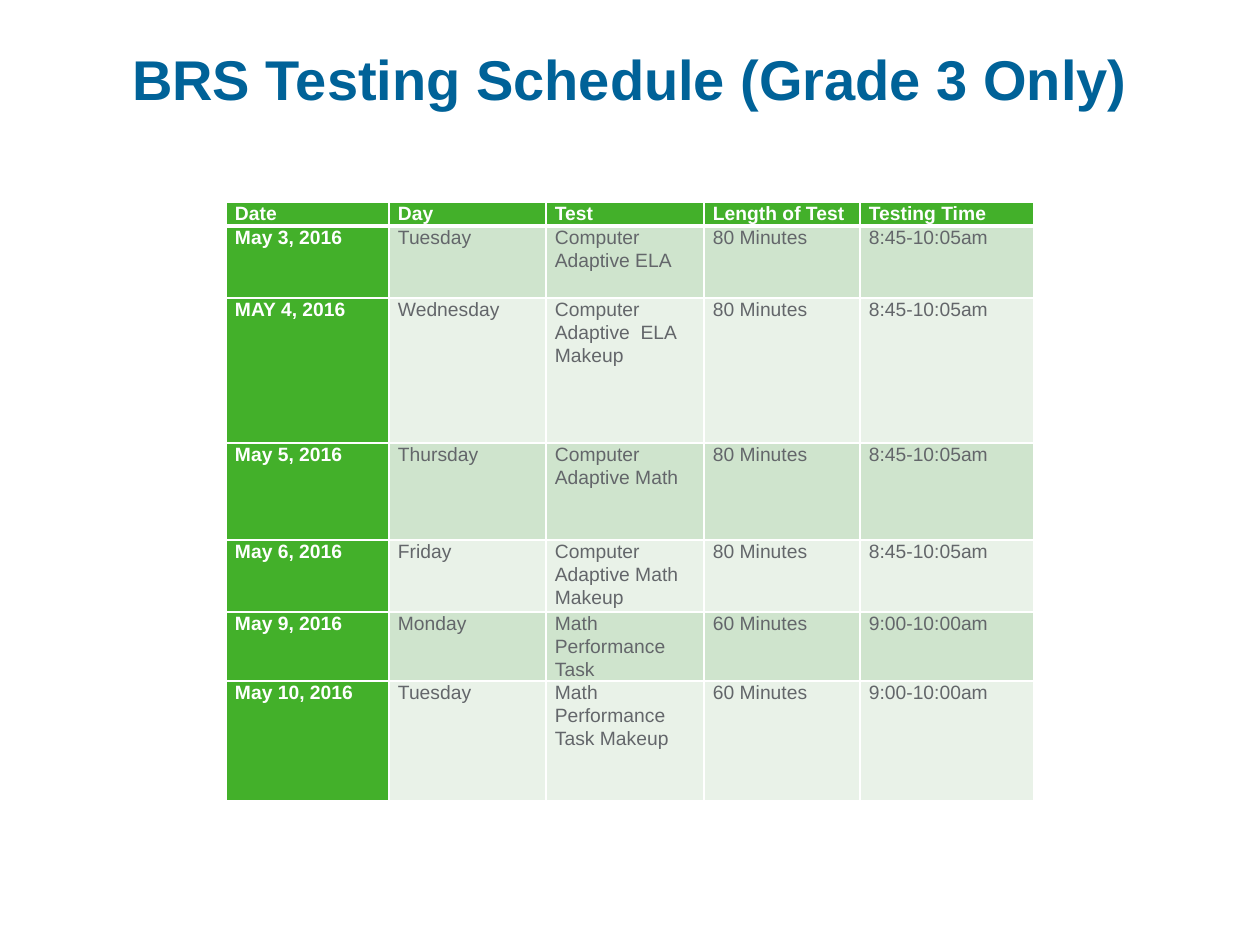
import pptx
import pptx.util
import pptx.dml.color
import pptx.enum.text
import lxml.etree

PX = 914400 // 126
NS = "{http://schemas.openxmlformats.org/drawingml/2006/main}"
GREEN, WHITE, GRAY = "43B02A", "FFFFFF", "63666A"
BANDS = ["CFE4CD", "E9F2E8"]


def rgb(value):
    return pptx.dml.color.RGBColor.from_string(value)


def add_text(p, text, size, color, bold):
    r = p.add_run()
    r.text = text
    r.font.name = "Arial"
    r.font.size = pptx.util.Pt(size)
    r.font.bold = bold
    r.font.color.rgb = rgb(color)


prs = pptx.Presentation()
prs.slide_width = pptx.util.Inches(10)
prs.slide_height = pptx.util.Inches(7.5)
s = prs.slides.add_slide(prs.slide_layouts[5])

# Title
title = s.shapes.title
title.left, title.top, title.width, title.height = [v * PX for v in (63, 38, 1134, 158)]
tf = title.text_frame
tf.auto_size = pptx.enum.text.MSO_AUTO_SIZE.NONE
tf.vertical_anchor = pptx.enum.text.MSO_ANCHOR.TOP
p = tf.paragraphs[0]
p.alignment = pptx.enum.text.PP_ALIGN.CENTER
add_text(p, "BRS Testing Schedule (Grade 3 Only)", 32, "006298", True)

# Schedule data
rows = [
    ["Date", "Day", "Test", "Length of Test", "Testing Time"],
    ["May 3, 2016", "Tuesday", "Computer Adaptive ELA", "80 Minutes", "8:45-10:05am"],
    ["MAY 4, 2016", "Wednesday", "Computer Adaptive  ELA Makeup", "80 Minutes", "8:45-10:05am"],
    ["May 5, 2016", "Thursday", "Computer Adaptive Math", "80 Minutes", "8:45-10:05am"],
    ["May 6, 2016", "Friday", "Computer Adaptive Math Makeup", "80 Minutes", "8:45-10:05am"],
    ["May 9, 2016", "Monday", "Math Performance Task", "60 Minutes", "9:00-10:00am"],
    ["May 10, 2016", "Tuesday", "Math Performance Task Makeup", "60 Minutes", "9:00-10:00am"],
]
widths = [163, 157, 158, 156, 174]
heights = [24, 72, 145, 97, 72, 69, 120]

# Table
table = s.shapes.add_table(len(rows), len(widths), 226 * PX, 202 * PX,
                           sum(widths) * PX, sum(heights) * PX).table
for column, width in zip(table.columns, widths):
    column.width = width * PX
for row, height in zip(table.rows, heights):
    row.height = height * PX

for i, row in enumerate(rows):
    for j, text in enumerate(row):
        cell = table.cell(i, j)
        heading = i == 0 or j == 0
        cell.margin_left = cell.margin_right = 9 * PX
        cell.margin_top = cell.margin_bottom = 0

        # White borders, thicker under the header row
        tcPr = cell._tc.get_or_add_tcPr()
        for side in "LRTB":
            thick = (i, side) in [(0, "B"), (1, "T")]
            ln = lxml.etree.SubElement(tcPr, NS + "ln" + side,
                                       w=str(pptx.util.Pt(3 if thick else 1)))
            fill = lxml.etree.SubElement(ln, NS + "solidFill")
            lxml.etree.SubElement(fill, NS + "srgbClr", val=WHITE)

        cell.fill.solid()
        cell.fill.fore_color.rgb = rgb(GREEN if heading else BANDS[(i - 1) % 2])
        p = cell.text_frame.paragraphs[0]
        p.line_spacing = 1.07
        add_text(p, text, 11, WHITE if heading else GRAY, heading)

prs.save("out.pptx")
